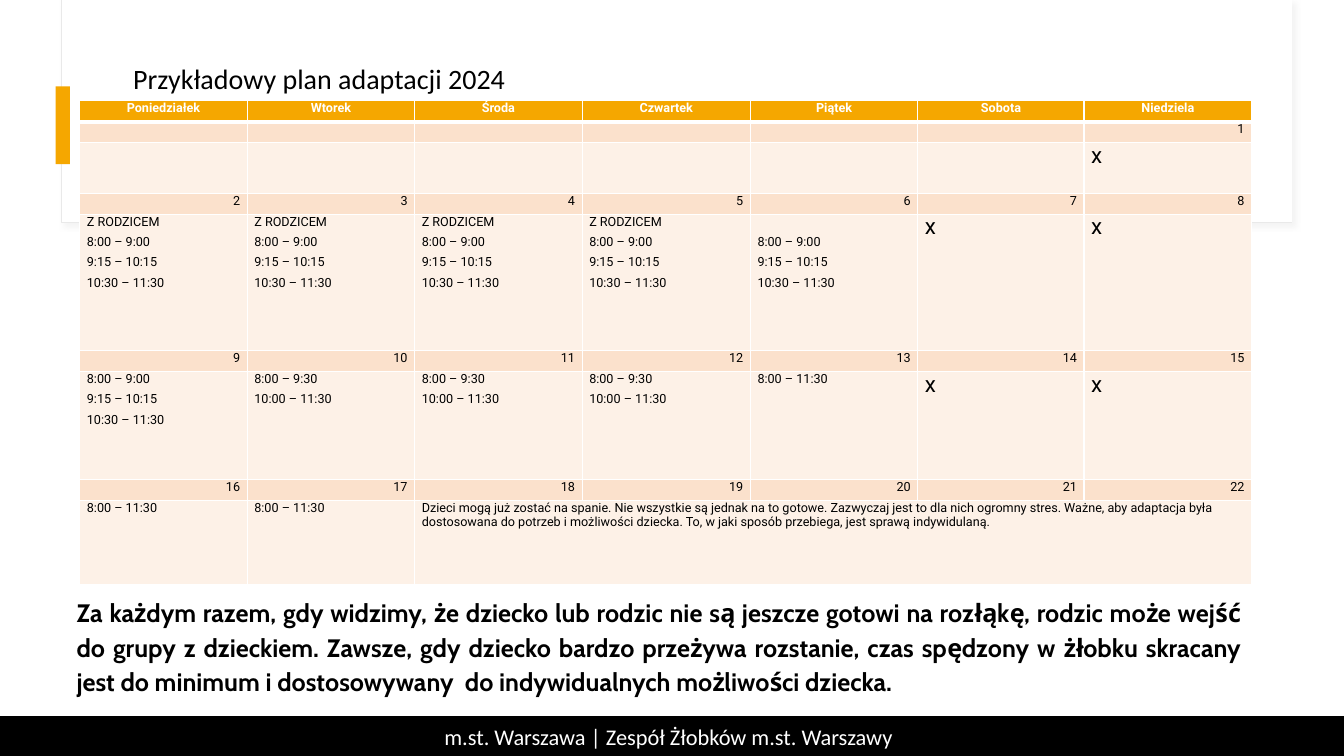
from lxml.etree import SubElement
from pptx import Presentation
from pptx.dml.color import RGBColor
from pptx.enum.shapes import MSO_SHAPE
from pptx.enum.text import MSO_ANCHOR, PP_ALIGN
from pptx.oxml.ns import qn
from pptx.util import Cm, Pt

COLORS = {
    "white": "FFFFFF",
    "black": "000000",
    "accent": "F5A700",
    "date": "FBE1CC",
    "hours": "FDF1E7",
    "outline": "E9E9E9",
    "shadow": "D9D9D9",
}
WEEKDAYS = ["Poniedziałek", "Wtorek", "Środa", "Czwartek", "Piątek", "Sobota", "Niedziela"]
MORNING = ["8:00 – 9:00", "9:15 – 10:15", "10:30 – 11:30"]
WITH_PARENT = ["Z RODZICEM", *MORNING]
TWO_GROUPS = ["8:00 – 9:30", "10:00 – 11:30"]
FULL_MORNING = ["8:00 – 11:30"]
CLOSED = ["x"]
NAP_NOTE = [
    "Dzieci mogą już zostać na spanie. Nie wszystkie są jednak na to gotowe. "
    "Zazwyczaj jest to dla nich ogromny stres. Ważne, aby adaptacja była dostosowana "
    "do potrzeb i możliwości dziecka. To, w jaki sposób przebiega, jest sprawą indywidulaną."
]
WEEKS = [
    [[]] * 6 + [CLOSED],
    [WITH_PARENT] * 4 + [MORNING, CLOSED, CLOSED],
    [MORNING] + [TWO_GROUPS] * 3 + [FULL_MORNING, CLOSED, CLOSED],
    [FULL_MORNING, FULL_MORNING, NAP_NOTE] + [[]] * 4,
]
COLUMN_WIDTHS = [4.22, 4.22, 4.22, 4.24, 4.22, 4.19, 4.22]
DATE_HEIGHT = 0.53
HOURS_HEIGHTS = [1.27, 3.43, 2.72, 2.13]
FIRST_DAY_COLUMN = 6
FRIDAY = 4
CLOSING = (
    "Za każdym razem, gdy widzimy, że dziecko lub rodzic nie są jeszcze gotowi na rozłąkę, "
    "rodzic może wejść do grupy z dzieckiem. Zawsze, gdy dziecko bardzo przeżywa rozstanie, "
    "czas spędzony w żłobku skracany jest do minimum i dostosowywany  do indywidualnych "
    "możliwości dziecka."
)


def color(name):
    return RGBColor.from_string(COLORS[name])


def style(para, font, size, ink="black", bold=False, align=PP_ALIGN.LEFT):
    para.alignment = align
    para.font.name = font
    para.font.size = Pt(size)
    para.font.bold = bold
    para.font.color.rgb = color(ink)


def add_panel(page, box, fill, line=None, width=1):
    panel = page.shapes.add_shape(MSO_SHAPE.RECTANGLE, *map(Cm, box))
    panel.shadow.inherit = False
    panel.fill.solid()
    panel.fill.fore_color.rgb = color(fill)
    if line:
        panel.line.color.rgb = color(line)
        panel.line.width = Pt(width)
    else:
        panel.line.fill.background()
    return panel


def add_shadow(panel):
    effects = panel._element.spPr.find(qn("a:effectLst"))
    shadow = SubElement(effects, qn("a:outerShdw"), blurRad=str(Pt(4)), dist=str(Pt(3)), dir="2700000")
    tint = SubElement(shadow, qn("a:srgbClr"), val=COLORS["shadow"])
    SubElement(tint, qn("a:alpha"), val="30000")


def add_frame(page, box):
    left, top, width, height = box
    add_shadow(add_panel(page, box, "white", "outline", 0.75))
    add_panel(page, (left + 0.02, top, width - 0.02, height - 0.02), "white")
    add_panel(page, (left - 0.15, top + 2.18, 0.36, 1.96), "accent")


def add_title(page, box):
    title = page.shapes.title
    title.left, title.top, title.width, title.height = map(Cm, box)
    title.text_frame.text = "Przykładowy plan adaptacji 2024"
    title.text_frame.vertical_anchor = MSO_ANCHOR.TOP
    para = title.text_frame.paragraphs[0]
    style(para, "Calibri", 20)
    para.line_spacing = 0.9
    page.shapes._spTree.append(title._element)


def add_borders(cell, top, bottom):
    properties = cell._tc.get_or_add_tcPr()
    for side, width in {"lnL": 1, "lnR": 1, "lnT": top, "lnB": bottom}.items():
        line = SubElement(properties, qn(f"a:{side}"), w=str(Pt(width)))
        SubElement(SubElement(line, qn("a:solidFill")), qn("a:srgbClr"), val=COLORS["white"])


def fill_cell(cell, lines, fill, size=9, spacing=2, top=1, bottom=1, **font):
    add_borders(cell, top, bottom)
    cell.fill.solid()
    cell.fill.fore_color.rgb = color(fill)
    cell.margin_left = cell.margin_right = Cm(0.18)
    cell.margin_top = cell.margin_bottom = 0
    cell.text_frame.text = "\n".join(lines)
    for para in cell.text_frame.paragraphs:
        style(para, "Roboto", size, **font)
        para.space_before = para.space_after = Pt(spacing)
        if not lines:
            SubElement(para._p, qn("a:endParaRPr"), sz=str(size * 100))


def add_calendar(page, box):
    heights = [DATE_HEIGHT]
    for height in HOURS_HEIGHTS:
        heights += [DATE_HEIGHT, height]
    table = page.shapes.add_table(len(heights), len(WEEKDAYS), *map(Cm, box)).table
    table.first_row = table.horz_banding = False
    for row, height in zip(table.rows, heights):
        row.height = Cm(height)
    for column, width in zip(table.columns, COLUMN_WIDTHS):
        column.width = Cm(width)
    for column, weekday in enumerate(WEEKDAYS):
        fill_cell(table.cell(0, column), [weekday], "accent", bottom=3,
                  ink="white", bold=True, align=PP_ALIGN.CENTER)
    for week, days in enumerate(WEEKS):
        row = 2 * week + 1
        for column, hours in enumerate(days):
            day = 7 * week + column - FIRST_DAY_COLUMN + 1
            fill_cell(table.cell(row, column), [str(day)] if day > 0 else [], "date",
                      spacing=0, top=1 if week else 3, align=PP_ALIGN.RIGHT)
            fill_cell(table.cell(row + 1, column), hours, "hours",
                      size=16 if hours == CLOSED else 9)
    table.cell(4, FRIDAY).margin_top = Cm(0.51)
    last = len(heights) - 1
    table.cell(last, 2).merge(table.cell(last, len(WEEKDAYS) - 1))


def add_text(page, box, text, wrap=True):
    frame = page.shapes.add_textbox(*map(Cm, box)).text_frame
    frame.word_wrap = wrap
    frame.text = text
    return frame.paragraphs[0]


def add_closing(page, box):
    para = add_text(page, box, CLOSING)
    style(para, "Cabin", 18, bold=True, align=PP_ALIGN.JUSTIFY)
    para.line_spacing = 1.15
    para.space_before = Pt(12)


def add_footer(page, box):
    left, top, width, height = box
    add_panel(page, box, "black", "black")
    label_box = (left + 10.95, top + 0.05, 11.96, height - 0.05)
    para = add_text(page, label_box, "m.st. Warszawa | Zespół Żłobków m.st. Warszawy", wrap=False)
    style(para, "Calibri", 16, "white")


def main():
    deck = Presentation()
    deck.slide_width, deck.slide_height = Cm(33.87), Cm(19.05)
    page = deck.slides.add_slide(deck.slide_layouts[5])
    add_frame(page, (1.55, 0, 31.01, 5.61))
    add_footer(page, (0, 18.06, 33.87, 0.99))
    add_title(page, (3.1, 1.52, 28.24, 1.78))
    add_calendar(page, (2.01, 2.54, 29.53, 12.2))
    add_closing(page, (1.68, 14.81, 29.85, 2.87))
    deck.save("out.pptx")


if __name__ == "__main__":
    main()
